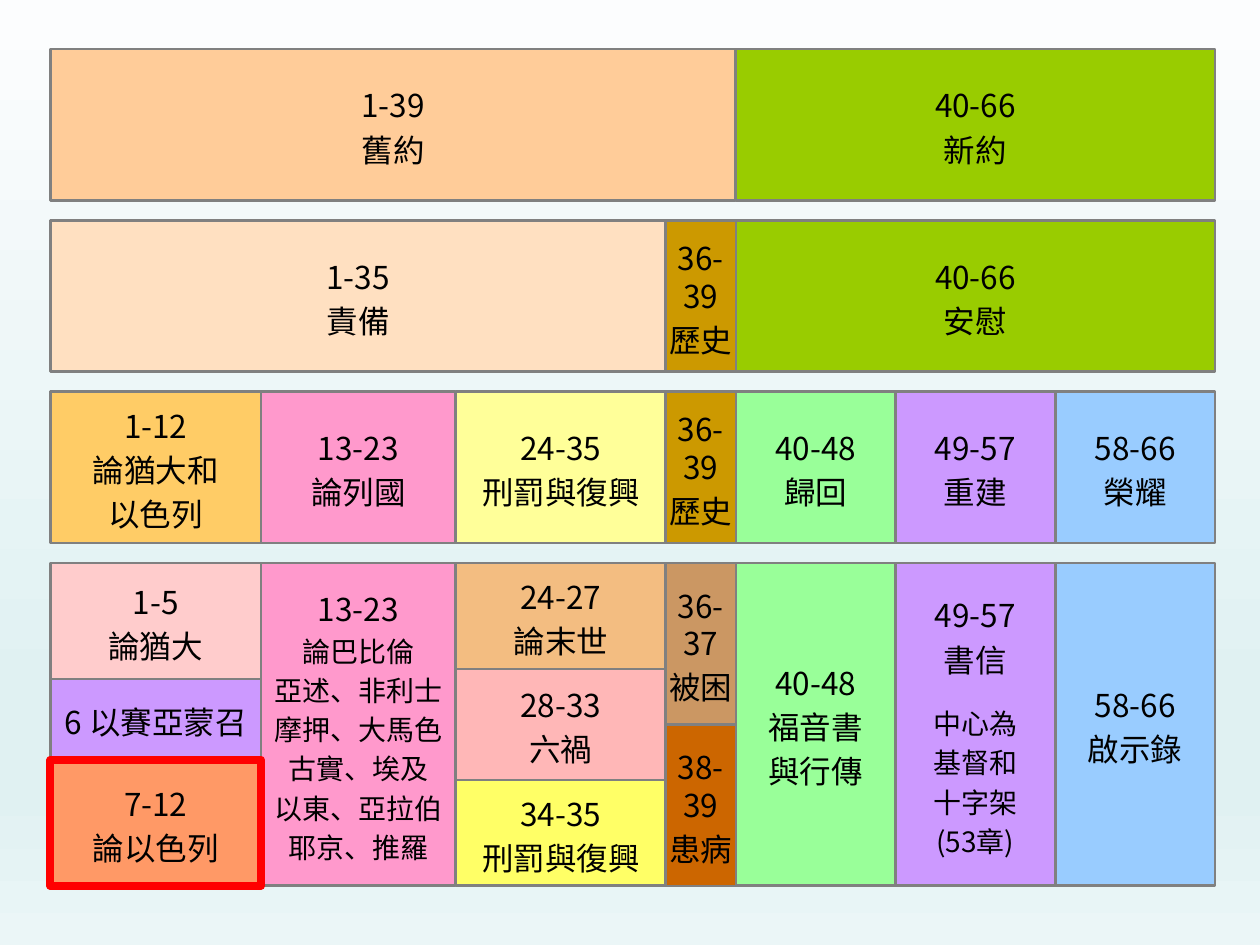
import pptx
import pptx.util
import pptx.dml.color
import pptx.enum.shapes
import pptx.enum.text
import pptx.oxml

Pt = pptx.util.Pt
RGB = pptx.dml.color.RGBColor
RECT = pptx.enum.shapes.MSO_SHAPE.RECTANGLE
FONT = "Noto Sans CJK SC"

BLACK = RGB(0x00, 0x00, 0x00)
GREY = RGB(0x80, 0x80, 0x80)
RED = RGB(0xFF, 0x00, 0x00)
PEACH = RGB(0xFF, 0xCC, 0x99)
CREAM = RGB(0xFF, 0xE0, 0xC1)
OLIVE = RGB(0x99, 0xCC, 0x00)
OCHRE = RGB(0xCC, 0x99, 0x00)
AMBER = RGB(0xFF, 0xCC, 0x66)
PINK = RGB(0xFF, 0x99, 0xCC)
LEMON = RGB(0xFF, 0xFF, 0x99)
MINT = RGB(0x99, 0xFF, 0x99)
LILAC = RGB(0xCC, 0x99, 0xFF)
SKY = RGB(0x99, 0xCC, 0xFF)
BLUSH = RGB(0xFF, 0xCC, 0xCC)
CORAL = RGB(0xFF, 0x99, 0x66)
TAN = RGB(0xF3, 0xBD, 0x81)
ROSE = RGB(0xFF, 0xB7, 0xB7)
YELLOW = RGB(0xFF, 0xFF, 0x66)
BROWN = RGB(0xCB, 0x97, 0x63)
RUST = RGB(0xCC, 0x66, 0x00)

prs = pptx.Presentation()
prs.slide_width, prs.slide_height = Pt(720), Pt(540)
slide = prs.slides.add_slide(prs.slide_layouts[6])

# Background gradient, top to bottom
fill = slide.background.fill
fill.gradient()
fill.gradient_angle = 270
stops = slide.background._cSld.find(".//" + pptx.oxml.ns.qn("a:gsLst"))
for stop in list(stops):
    stops.remove(stop)
for pos, tone in [(0, "FCFDFE"), (74, "E0F1F2"), (83, "E0F1F2"), (100, "EBF6F7")]:
    stops.append(pptx.oxml.parse_xml(
        f'<a:gs {pptx.oxml.ns.nsdecls("a")} pos="{pos * 1000}">'
        f'<a:srgbClr val="{tone}"/></a:gs>'))

# Grid: column edges, and four rows at an even step
cols = [28.8, 149.2, 260.5, 380.4, 420.5, 511.7, 603, 694.3]
rows = [28.1 + 97.9 * i for i in range(4)]
HIGH, END = 86.4, 506.2


def add_box(left, right, top, bottom, line, width):
    x = cols[left]
    box = slide.shapes.add_shape(
        RECT, Pt(x), Pt(top), Pt(cols[right] - x), Pt(bottom - top))
    box.shadow.inherit = False
    box.line.color.rgb = line
    box.line.width = Pt(width)
    return box


def add_cell(left, right, top, bottom, color, big, small=(), gap=0):
    box = add_box(left, right, top, bottom, GREY, 1.5)
    box.fill.solid()
    box.fill.fore_color.rgb = color
    frame = box.text_frame
    frame.word_wrap = False
    frame.vertical_anchor = pptx.enum.text.MSO_ANCHOR.MIDDLE
    frame.margin_left = frame.margin_right = frame.margin_bottom = 0
    frame.margin_top = Pt(3)
    lines = [(text, 18) for text in big] + [(text, 16) for text in small]
    for i, (text, size) in enumerate(lines):
        para = frame.paragraphs[0] if i == 0 else frame.add_paragraph()
        para.alignment = pptx.enum.text.PP_ALIGN.CENTER
        para.line_spacing = Pt(size * 1.2)
        # No gap inside a split verse range or below the last line
        tight = text.endswith("-") or i == len(lines) - 1
        extra = gap if i == len(big) - 1 else 0
        para.space_after = Pt(0 if tight else size * 0.2 + extra)
        run = para.add_run()
        run.text = text
        run.font.size = Pt(size)
        run.font.name = FONT
        run.font.color.rgb = BLACK
        props = run.font._element
        face = pptx.oxml.parse_xml(
            f'<a:ea {pptx.oxml.ns.nsdecls("a")} typeface="{FONT}"/>')
        props.append(face)


# Upper three rows: first and last column edge, colour, lines
bands = [
    [(0, 4, PEACH, ["1-39", "舊約"]),
     (4, 7, OLIVE, ["40-66", "新約"])],
    [(0, 3, CREAM, ["1-35", "責備"]),
     (3, 4, OCHRE, ["36-", "39", "歷史"]),
     (4, 7, OLIVE, ["40-66", "安慰"])],
    [(0, 1, AMBER, ["1-12", "論猶大和", "以色列"]),
     (1, 2, PINK, ["13-23", "論列國"]),
     (2, 3, LEMON, ["24-35", "刑罰與復興"]),
     (3, 4, OCHRE, ["36-", "39", "歷史"]),
     (4, 5, MINT, ["40-48", "歸回"]),
     (5, 6, LILAC, ["49-57", "重建"]),
     (6, 7, SKY, ["58-66", "榮耀"])],
]
for top, band in zip(rows, bands):
    for left, right, color, text in band:
        add_cell(left, right, top, top + HIGH, color, text)

# Bottom row: stacks of cells, each with its lower edge
stacks = {
    0: [(388.1, BLUSH, ["1-5", "論猶大"]),
        (434.2, LILAC, ["6 以賽亞蒙召"]),
        (END, CORAL, ["7-12", "論以色列"])],
    1: [(END, PINK, ["13-23"],
         ["論巴比倫", "亞述、非利士", "摩押、大馬色", "古實、埃及",
          "以東、亞拉伯", "耶京、推羅"])],
    2: [(382.3, TAN, ["24-27", "論末世"]),
        (445.7, ROSE, ["28-33", "六禍"]),
        (END, YELLOW, ["34-35", "刑罰與復興"])],
    3: [(414, BROWN, ["36-", "37", "被困"]),
        (END, RUST, ["38-", "39", "患病"])],
    4: [(END, MINT, ["40-48", "福音書", "與行傳"])],
    5: [(END, LILAC, ["49-57", "書信"],
         ["中心為", "基督和", "十字架", "(53章)"], 12.6)],
    6: [(END, SKY, ["58-66", "啟示錄"])],
}
for col, stack in stacks.items():
    top = rows[3]
    for bottom, *rest in stack:
        add_cell(col, col + 1, top, bottom, *rest)
        top = bottom

# Red frame around chapters 7-12
mark = add_box(0, 1, 434.2, END, RED, 4.5)
mark.fill.background()

prs.save("out.pptx")
